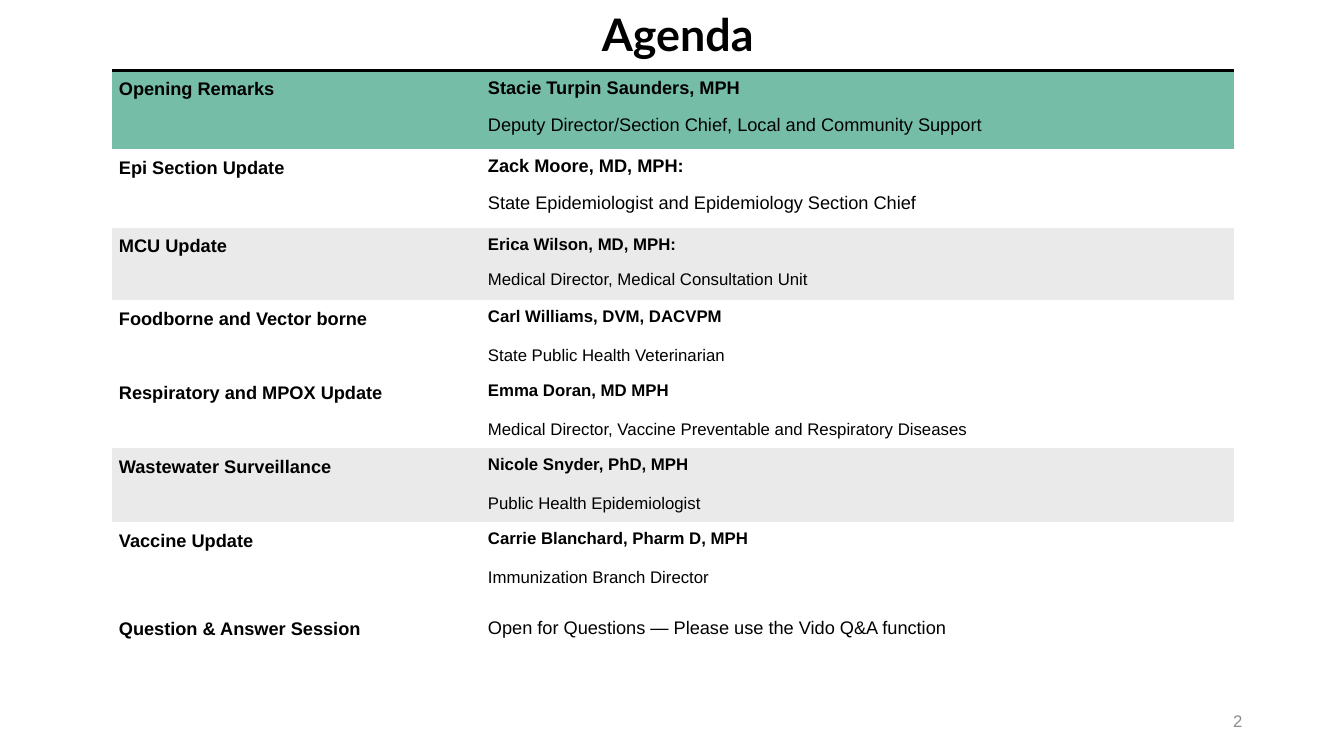
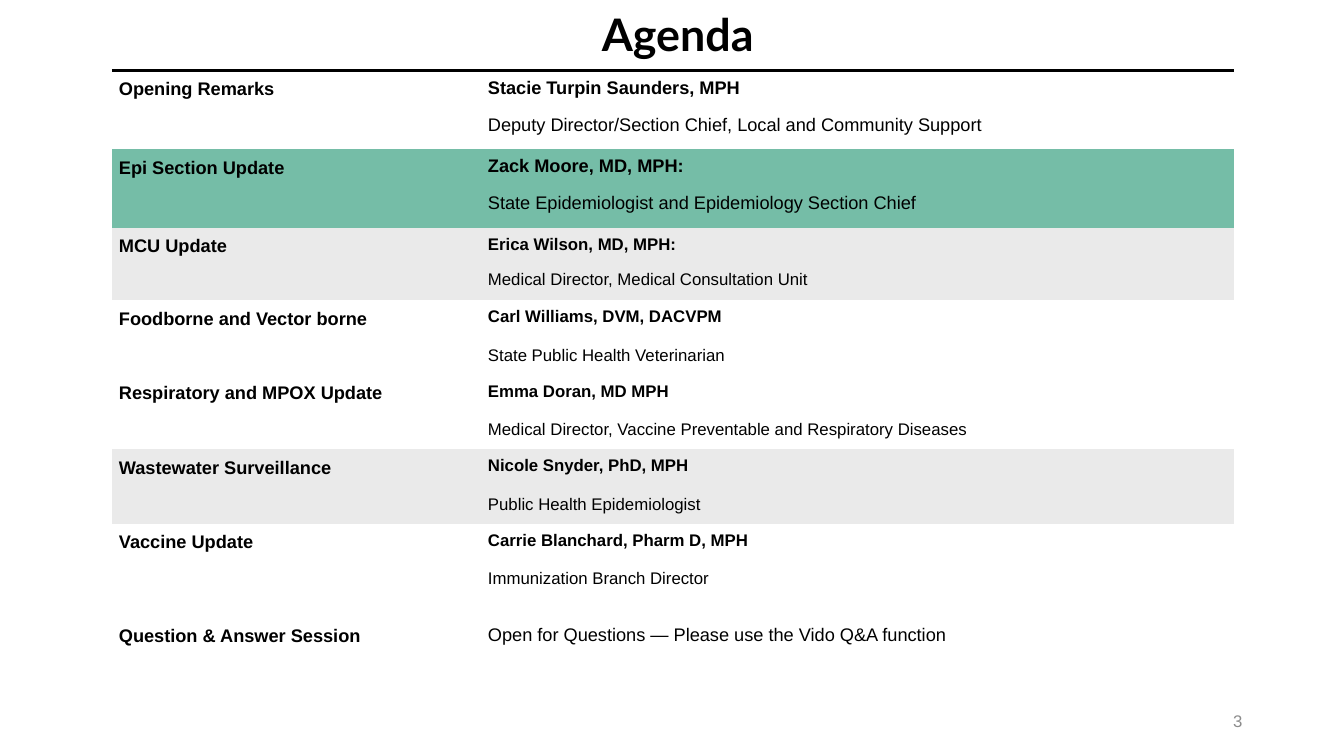
"""Builds two agenda slides, each highlighting the current session."""
from dataclasses import dataclass

from lxml.etree import SubElement
from pptx import Presentation
from pptx.dml.color import RGBColor
from pptx.enum.text import MSO_ANCHOR as Anchor, PP_ALIGN as Align
from pptx.oxml import parse_xml
from pptx.oxml.ns import nsdecls, qn
from pptx.util import Inches, Pt


@dataclass(frozen=True)
class Theme:
    ink: str = "000000"
    muted: str = "8C8C8C"
    highlight: str = "75BDA7"
    band: str = "EAEAEA"
    title_font: str = "Lato"
    body_font: str = "Arial"
    title_size: int = 32
    large_size: int = 13
    small_size: int = 12
    rule_width: float = 2.25
    plain_table: str = "{2D5ABB26-0587-4C30-8999-92F81FD0307C}"


@dataclass(frozen=True)
class Session:
    topic: str
    lines: tuple
    size: int = Theme.small_size
    gap: int = 14
    banded: bool = False
    bold_lead: bool = True


THEME = Theme()
SESSIONS = (
    Session("Opening Remarks",
            ("Stacie Turpin Saunders, MPH",
             "Deputy Director/Section Chief, Local and Community Support"),
            THEME.large_size, 12),
    Session("Epi Section Update",
            ("Zack Moore, MD, MPH:", "State Epidemiologist and Epidemiology Section Chief"),
            THEME.large_size, 12),
    Session("MCU Update",
            ("Erica Wilson, MD, MPH:", "Medical Director, Medical Consultation Unit"),
            gap=12, banded=True),
    Session("Foodborne and Vector borne",
            ("Carl Williams, DVM, DACVPM", "State Public Health Veterinarian")),
    Session("Respiratory and MPOX Update",
            ("Emma Doran, MD MPH",
             "Medical Director, Vaccine Preventable and Respiratory Diseases")),
    Session("Wastewater Surveillance",
            ("Nicole Snyder, PhD, MPH", "Public Health Epidemiologist"), banded=True),
    Session("Vaccine Update",
            ("Carrie Blanchard, Pharm D, MPH", "Immunization Branch Director")),
    Session("Question & Answer Session",
            ("Open for Questions — Please use the Vido Q&A function",),
            THEME.large_size, bold_lead=False),
)
COLUMN_WIDTHS = (3.66, 7.47)
AGENDAS = (
    (2, "Opening Remarks", (0.78, 0.78, 0.72, 0.72, 0.72, 0.72, 0.88, 0.4)),
    (3, "Epi Section Update", (0.78, 0.78, 0.72, 0.74, 0.74, 0.74, 0.93, 0.4)),
)


def add_run(paragraph, text, size, font=THEME.body_font, color=THEME.ink, bold=False):
    """Append one styled run to a paragraph."""
    run = paragraph.add_run()
    run.text = text
    run.font.name = font
    run.font.size = Pt(size)
    run.font.bold = bold
    run.font.color.rgb = RGBColor.from_string(color)


def add_text_box(slide, box, text, size, align=Align.LEFT, anchor=Anchor.TOP, **style):
    """Add a wrapped single-paragraph text box."""
    frame = slide.shapes.add_textbox(*map(Inches, box)).text_frame
    frame.word_wrap = True
    frame.vertical_anchor = anchor
    paragraph = frame.paragraphs[0]
    paragraph.alignment = align
    add_run(paragraph, text, size, **style)


def add_top_rule(cell):
    """Draw the heavy rule along the top edge of a cell."""
    line = parse_xml(f'<a:lnT {nsdecls("a")} w="{Pt(THEME.rule_width)}"/>')
    fill = SubElement(line, qn("a:solidFill"))
    SubElement(fill, qn("a:srgbClr"), val=THEME.ink)
    cell._tc.get_or_add_tcPr().insert(0, line)


def style_cell(cell, fill_color):
    """Set the margins and fill of a cell."""
    margin = Inches(0.07)
    cell.margin_left = cell.margin_right = margin
    cell.margin_top = cell.margin_bottom = margin
    if fill_color:
        cell.fill.solid()
        cell.fill.fore_color.rgb = RGBColor.from_string(fill_color)
    else:
        cell.fill.background()


def fill_row(topic_cell, speaker_cell, session):
    """Write a session's topic and speaker lines."""
    paragraph = topic_cell.text_frame.paragraphs[0]
    paragraph.line_spacing = 1.07
    add_run(paragraph, session.topic, THEME.large_size, bold=True)
    frame = speaker_cell.text_frame
    for index, text in enumerate(session.lines):
        paragraph = frame.add_paragraph() if index else frame.paragraphs[0]
        if index:
            paragraph.space_before = Pt(session.gap)
        add_run(paragraph, text, session.size, bold=session.bold_lead and index == 0)


def add_agenda_table(slide, current_topic, row_heights):
    """Add the agenda table with the current session highlighted."""
    frame = slide.shapes.add_table(
        len(SESSIONS), len(COLUMN_WIDTHS), Inches(1.11), Inches(0.7),
        Inches(sum(COLUMN_WIDTHS)), Inches(sum(row_heights)))
    table = frame.table
    table.first_row = table.horz_banding = False
    table._tbl.tblPr.find(qn("a:tableStyleId")).text = THEME.plain_table
    for column, width in zip(table.columns, COLUMN_WIDTHS):
        column.width = Inches(width)
    for row, height, session in zip(table.rows, row_heights, SESSIONS):
        row.height = Inches(height)
        fill_color = THEME.band if session.banded else None
        if session.topic == current_topic:
            fill_color = THEME.highlight
        for cell in row.cells:
            style_cell(cell, fill_color)
        fill_row(*row.cells, session)
    for cell in table.rows[0].cells:
        add_top_rule(cell)


def add_agenda_slide(presentation, number, current_topic, row_heights):
    """Add one agenda slide with its title and number."""
    slide = presentation.slides.add_slide(presentation.slide_layouts[6])
    add_text_box(slide, (9.42, 6.95, 3, 0.4), str(number), THEME.small_size,
                 Align.RIGHT, Anchor.MIDDLE, color=THEME.muted)
    add_agenda_table(slide, current_topic, row_heights)
    add_text_box(slide, (5.87, 0.02, 1.72, 0.64), "Agenda", THEME.title_size,
                 font=THEME.title_font, bold=True)


def main():
    """Build and save the presentation."""
    presentation = Presentation()
    presentation.slide_width = Inches(13.33)
    presentation.slide_height = Inches(7.5)
    for agenda in AGENDAS:
        add_agenda_slide(presentation, *agenda)
    presentation.save("out.pptx")


if __name__ == "__main__":
    main()
